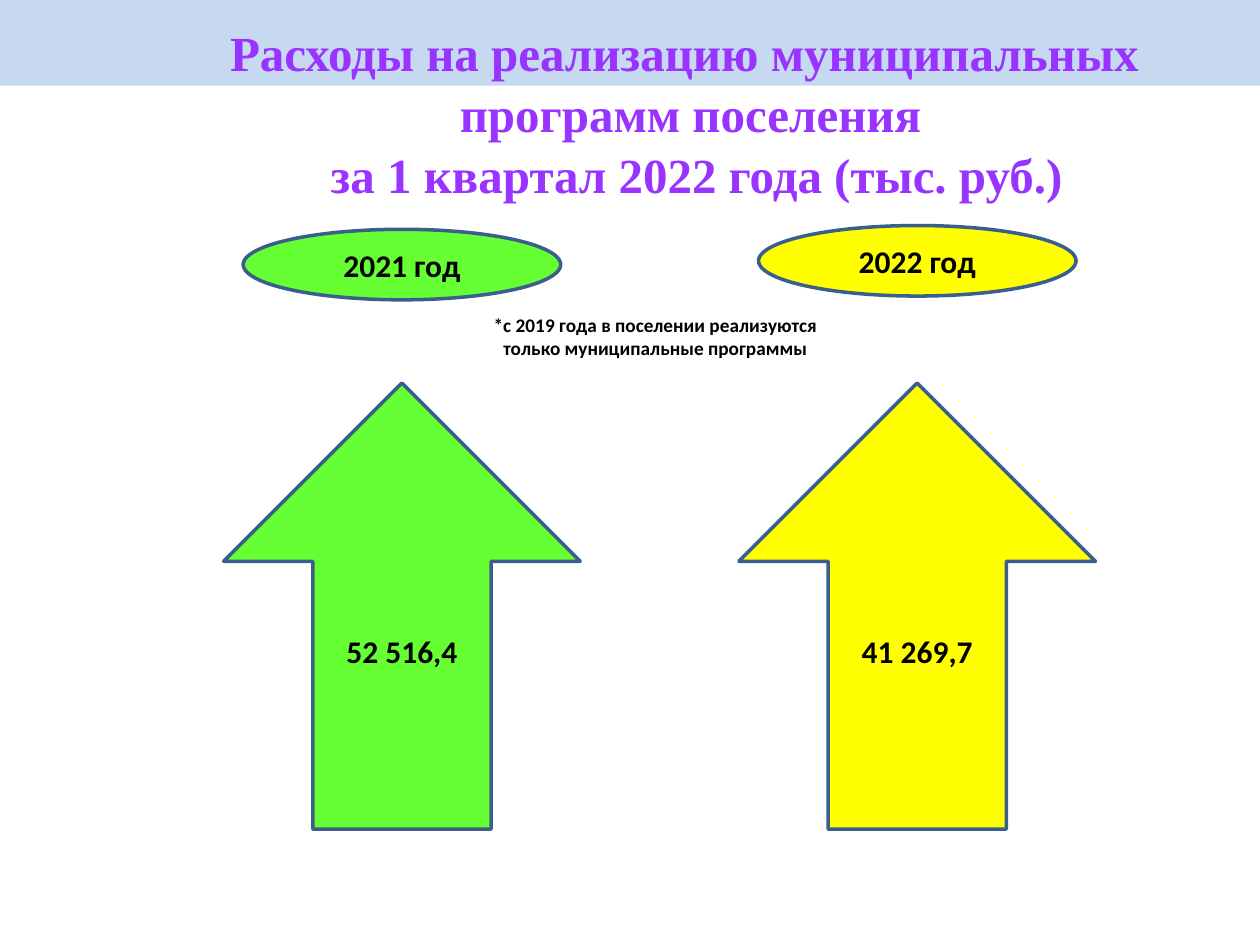
from dataclasses import dataclass

from pptx import Presentation
from pptx.dml.color import RGBColor
from pptx.enum.shapes import MSO_SHAPE
from pptx.enum.text import MSO_ANCHOR, PP_ALIGN
from pptx.shapes.autoshape import Shape
from pptx.slide import Slide
from pptx.util import Inches, Pt

RECTANGLE = MSO_SHAPE.RECTANGLE
UP_ARROW = MSO_SHAPE.UP_ARROW
OVAL = MSO_SHAPE.OVAL
CENTER = PP_ALIGN.CENTER
TOP = MSO_ANCHOR.TOP
MIDDLE = MSO_ANCHOR.MIDDLE


@dataclass(frozen=True)
class Theme:
    band: str = "C6D9F1"
    title: str = "9933FF"
    text: str = "000000"
    outline: str = "3A5F8C"
    previous_year: str = "66FF33"
    current_year: str = "FFFF00"
    title_font: str = "Times New Roman"
    body_font: str = "Calibri"
    title_size: float = 28
    label_size: float = 18
    note_size: float = 11
    outline_width: float = 2


@dataclass(frozen=True)
class Box:
    left: float
    top: float
    width: float
    height: float

    def lengths(self) -> tuple:
        return tuple(map(Inches, (self.left, self.top, self.width, self.height)))


@dataclass(frozen=True)
class YearSpending:
    year: str
    amount: str
    color: str
    center: float
    label_top: float


THEME = Theme()
YEARS = (
    YearSpending("2021 год", "52 516,4", THEME.previous_year, 3.19, 1.82),
    YearSpending("2022 год", "41 269,7", THEME.current_year, 7.28, 1.79),
)
ARROW_TOP, ARROW_WIDTH, ARROW_HEIGHT = 3.04, 2.83, 3.54
LABEL_WIDTH, LABEL_HEIGHT = 2.52, 0.56


def write_text(shape: Shape, *lines: str, size: float, color: str = THEME.text,
               font: str = THEME.body_font, anchor: MSO_ANCHOR = MIDDLE,
               spacing: float = 1.0) -> None:
    frame = shape.text_frame
    frame.word_wrap = True
    frame.vertical_anchor = anchor
    for index, line in enumerate(lines):
        paragraph = frame.add_paragraph() if index else frame.paragraphs[0]
        paragraph.alignment = CENTER
        paragraph.line_spacing = spacing
        run = paragraph.add_run()
        run.text = line
        run.font.name = font
        run.font.size = Pt(size)
        run.font.bold = True
        run.font.color.rgb = RGBColor.from_string(color)


def add_filled_shape(slide: Slide, kind: MSO_SHAPE, box: Box, fill: str,
                     outlined: bool = True) -> Shape:
    shape = slide.shapes.add_shape(kind, *box.lengths())
    shape.shadow.inherit = False
    shape.fill.solid()
    shape.fill.fore_color.rgb = RGBColor.from_string(fill)
    if outlined:
        shape.line.color.rgb = RGBColor.from_string(THEME.outline)
        shape.line.width = Pt(THEME.outline_width)
    else:
        shape.line.fill.background()
    return shape


def add_arrow(slide: Slide, spending: YearSpending) -> None:
    box = Box(spending.center - ARROW_WIDTH / 2, ARROW_TOP, ARROW_WIDTH, ARROW_HEIGHT)
    arrow = add_filled_shape(slide, UP_ARROW, box, spending.color)
    write_text(arrow, spending.amount, size=THEME.label_size)


def add_year_label(slide: Slide, spending: YearSpending) -> None:
    box = Box(spending.center - LABEL_WIDTH / 2, spending.label_top, LABEL_WIDTH, LABEL_HEIGHT)
    label = add_filled_shape(slide, OVAL, box, spending.color)
    write_text(label, spending.year, size=THEME.label_size)


def main() -> None:
    presentation = Presentation()
    presentation.slide_width = Inches(10)
    presentation.slide_height = Inches(7.5)
    slide = presentation.slides.add_slide(presentation.slide_layouts[6])

    add_filled_shape(slide, RECTANGLE, Box(0, 0, 10, 0.68), THEME.band, outlined=False)
    title = slide.shapes.add_textbox(*Box(1.15, 0.11, 8.66, 1.51).lengths())
    write_text(title, "Расходы на реализацию муниципальных  программ поселения",
               " за 1 квартал 2022 года (тыс. руб.)", size=THEME.title_size,
               color=THEME.title, font=THEME.title_font, anchor=TOP, spacing=1.04)
    for spending in YEARS:
        add_arrow(slide, spending)
    for spending in YEARS:
        add_year_label(slide, spending)
    note = slide.shapes.add_textbox(*Box(2.72, 2.44, 5, 0.47).lengths())
    write_text(note, "*с 2019 года в поселении реализуются ",
               "только муниципальные программы ", size=THEME.note_size, anchor=TOP)

    presentation.save("out.pptx")


if __name__ == "__main__":
    main()
